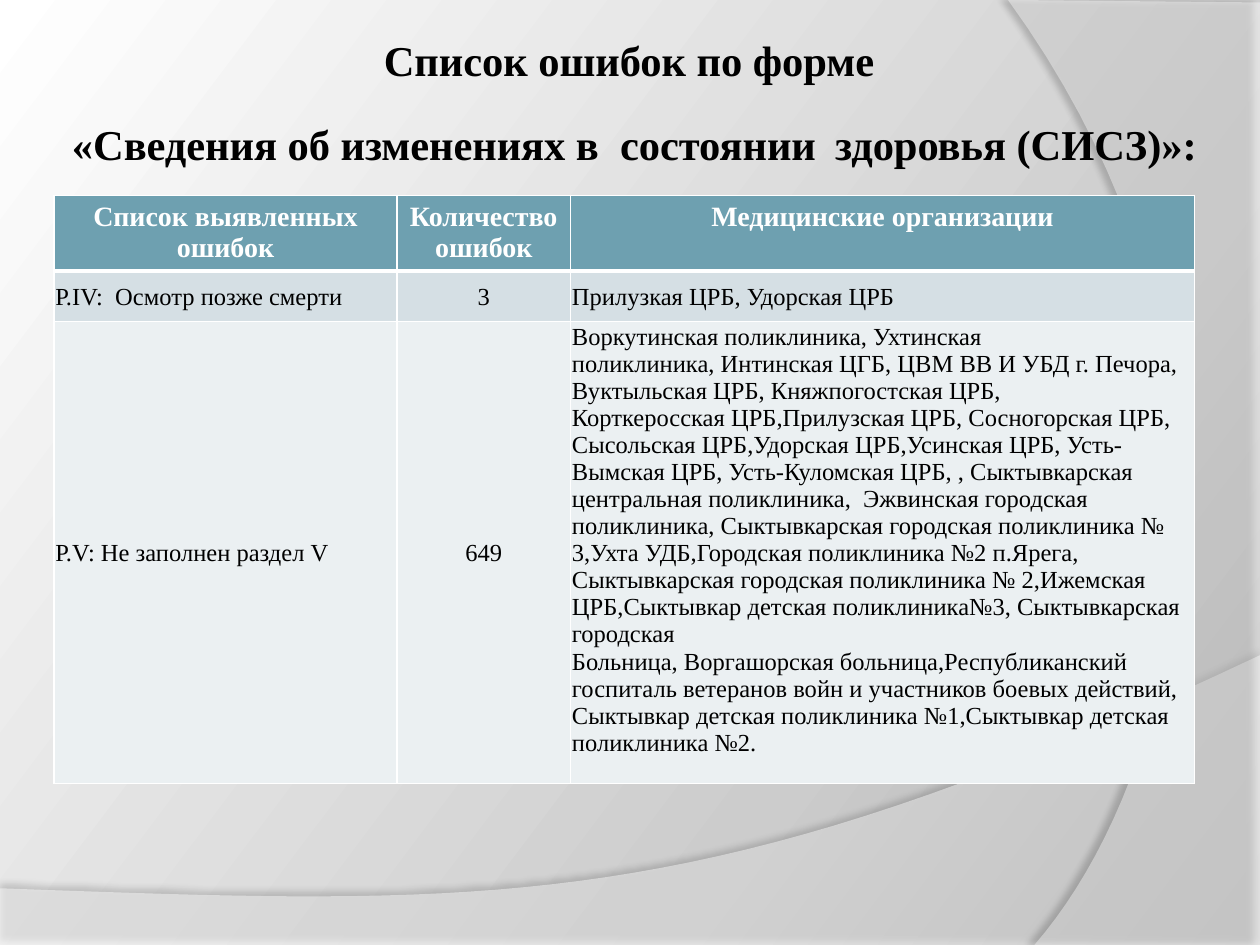
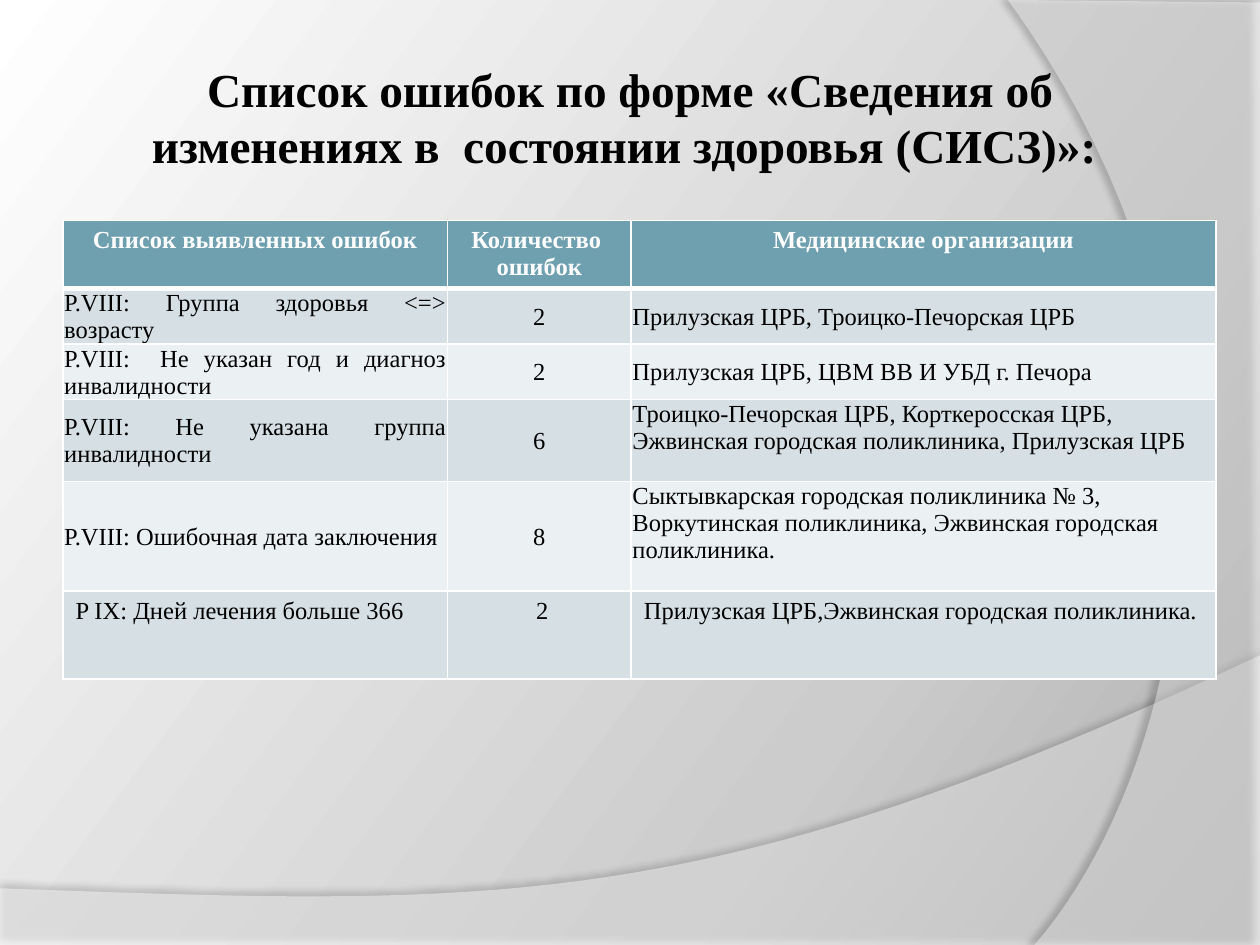
from pptx import Presentation
from pptx.dml.color import RGBColor
from pptx.enum.text import MSO_ANCHOR, MSO_AUTO_SIZE, PP_ALIGN
from pptx.oxml import parse_xml
from pptx.oxml.ns import nsdecls, qn
from pptx.util import Inches, Pt

BLACK = RGBColor(0x00, 0x00, 0x00)
WHITE = RGBColor(0xFF, 0xFF, 0xFF)
HEADER_TEAL = RGBColor(0x6E, 0xA0, 0xB0)
ROW_DARK = RGBColor(0xD5, 0xDF, 0xE4)
ROW_LIGHT = RGBColor(0xEB, 0xF0, 0xF2)
BACKDROP_STOPS = [
    (0, RGBColor(0xAB, 0xAB, 0xAB)),
    (30, RGBColor(0xCC, 0xCC, 0xCC)),
    (100, WHITE),
]

HEADINGS = ["Список выявленных ошибок", "Количество \nошибок", "Медицинские организации"]
COLUMN_ALIGNS = [PP_ALIGN.JUSTIFY, PP_ALIGN.CENTER, PP_ALIGN.LEFT]
BLANK_LINE = 0.21

SECTION_V_CLINICS = "\n".join([
    "Воркутинская поликлиника, Ухтинская",
    "поликлиника, Интинская ЦГБ, ЦВМ ВВ И УБД г. Печора, Вуктыльская ЦРБ, "
    "Княжпогостская ЦРБ,",
    "Корткеросская ЦРБ,Прилузская ЦРБ, Сосногорская ЦРБ, Сысольская ЦРБ,"
    "Удорская ЦРБ,Усинская ЦРБ, Усть-Вымская ЦРБ, Усть-Куломская ЦРБ, , "
    "Сыктывкарская центральная поликлиника,  Эжвинская городская поликлиника, "
    "Сыктывкарская городская поликлиника № 3,Ухта УДБ,Городская поликлиника №2 "
    "п.Ярега, Сыктывкарская городская поликлиника № 2,Ижемская ЦРБ,Сыктывкар "
    "детская поликлиника№3, Сыктывкарская городская",
    "Больница, Воргашорская больница,Республиканский госпиталь ветеранов войн и "
    "участников боевых действий, Сыктывкар детская поликлиника №1,Сыктывкар "
    "детская поликлиника №2.",
])


def curve_points(start, control_1, control_2, end, steps=40):
    """Points along a cubic Bezier curve, both ends included."""
    points = []
    for step in range(steps + 1):
        t = step / steps
        weights = ((1 - t) ** 3, 3 * t * (1 - t) ** 2, 3 * t ** 2 * (1 - t), t ** 3)
        corners = (start, control_1, control_2, end)
        points.append(tuple(sum(w * c[axis] for w, c in zip(weights, corners))
                            for axis in (0, 1)))
    return points


class Deck:
    font = "Times New Roman"

    def __init__(self):
        self.prs = Presentation()
        self.prs.slide_width, self.prs.slide_height = Inches(10), Inches(7.5)
        self.slide = None
        self.paint_backdrop()

    def paint_backdrop(self):
        stops = "".join(f'<a:gs pos="{pos * 1000}"><a:srgbClr val="{color}"/></a:gs>'
                        for pos, color in BACKDROP_STOPS)
        fill = self.prs.slide_master.background.fill
        fill.solid()
        properties = self.prs.slide_master.element.cSld.find(qn("p:bg")).find(qn("p:bgPr"))
        properties.replace(properties[0], parse_xml(
            f'<a:gradFill {nsdecls("a")} rotWithShape="1"><a:gsLst>{stops}</a:gsLst>'
            f'<a:lin ang="{217 * 60000}" scaled="0"/></a:gradFill>'))

    def new_slide(self):
        self.slide = self.prs.slides.add_slide(self.prs.slide_layouts[5])

    def master_band(self, outline, opacity, shadow_opacity, shadow_distance, shadow_angle):
        """Draw a translucent band and move it behind everything, onto the master."""
        start, *others = [(Inches(x), Inches(y)) for x, y in outline]
        builder = self.slide.shapes.build_freeform(*start)
        builder.add_line_segments(others, close=True)
        band = builder.convert_to_shape()
        band.fill.solid()
        band.fill.fore_color.rgb = WHITE
        band.line.fill.background()
        properties = band.element.spPr
        color = properties.find(qn("a:solidFill"))[0]
        color.append(parse_xml(f'<a:alpha {nsdecls("a")} val="{opacity * 1000}"/>'))
        properties.append(parse_xml(
            f'<a:effectLst {nsdecls("a")}><a:outerShdw blurRad="{Pt(4)}" '
            f'dist="{Pt(shadow_distance)}" dir="{shadow_angle * 60000}" algn="ctr" '
            f'rotWithShape="0"><a:srgbClr val="{BLACK}">'
            f'<a:alpha val="{shadow_opacity * 1000}"/></a:srgbClr></a:outerShdw>'
            '</a:effectLst>'))
        placeholder = self.prs.slide_master.placeholders[0]
        placeholder.element.addprevious(band.element)

    def add_run(self, paragraph, text, size, color, bold):
        run = paragraph.add_run()
        run.text = text
        run.font.name, run.font.size, run.font.bold = self.font, Pt(size), bold
        run.font.color.rgb = color

    def title(self, box, lines):
        """Each line is a list of (text, size) runs."""
        title = self.slide.shapes.title
        title.left, title.top, title.width, title.height = map(Inches, box)
        frame = title.text_frame
        frame.word_wrap, frame.auto_size = True, MSO_AUTO_SIZE.NONE
        frame.vertical_anchor = MSO_ANCHOR.MIDDLE
        frame.margin_left = frame.margin_right = Inches(0.05)
        frame.margin_top = frame.margin_bottom = Inches(0.05)
        paragraph = frame.paragraphs[0]
        paragraph.alignment = PP_ALIGN.CENTER
        for number, line in enumerate(lines):
            if number:
                paragraph.add_line_break()
            for text, size in line:
                self.add_run(paragraph, text, size, BLACK, True)

    def fill_cell(self, cell, text, size, align, color, bold, fill, top=1, bottom=1):
        for side, width in (("L", 1), ("R", 1), ("T", top), ("B", bottom)):
            cell._tc.get_or_add_tcPr().append(parse_xml(
                f'<a:ln{side} {nsdecls("a")} w="{Pt(width)}"><a:solidFill>'
                f'<a:srgbClr val="{WHITE}"/></a:solidFill></a:ln{side}>'))
        cell.fill.solid()
        cell.fill.fore_color.rgb = fill
        for number, line in enumerate(text.split("\n")):
            frame = cell.text_frame
            paragraph = frame.add_paragraph() if number else frame.paragraphs[0]
            paragraph.alignment = align
            self.add_run(paragraph, line, size, color, bold)

    def tighten(self, cell, bottom=0.0):
        cell.vertical_anchor = MSO_ANCHOR.MIDDLE
        cell.margin_left = cell.margin_right = cell.margin_top = Inches(0.01)
        cell.margin_bottom = Inches(bottom)

    def error_table(self, left, top, widths, heights, errors, heading_size,
                    spaced_rows=(), roomy_rows=()):
        """Spaced rows leave a line free under the clinics; roomy rows keep full margins."""
        table = self.slide.shapes.add_table(
            len(heights), len(widths), Inches(left), Inches(top),
            Inches(sum(widths)), Inches(sum(heights))).table
        for column, width in zip(table.columns, widths):
            column.width = Inches(width)
        for row, height in zip(table.rows, heights):
            row.height = Inches(height)
        for col, heading in enumerate(HEADINGS):
            self.fill_cell(table.cell(0, col), heading, heading_size, PP_ALIGN.CENTER,
                           WHITE, True, HEADER_TEAL, bottom=3)
        for row, error in enumerate(errors, start=1):
            for col, text in enumerate(error):
                cell = table.cell(row, col)
                align = COLUMN_ALIGNS[col]
                if row in roomy_rows and col == 0:
                    align = PP_ALIGN.LEFT
                self.fill_cell(cell, text, 14, align, BLACK, False,
                               ROW_DARK if row % 2 else ROW_LIGHT, top=3 if row == 1 else 1)
                if row not in roomy_rows:
                    self.tighten(cell, BLANK_LINE if row in spaced_rows and col == 2 else 0)


def main():
    deck = Deck()

    deck.new_slide()
    lower_curve = curve_points((10, 5.2), (5.59, 7.29), (3.91, 7.19), (0, 7.05))
    right_curve = curve_points((8.21, 7.5), (9.35, 6.19), (10.18, 3), (8, 0))
    deck.master_band([(0, 7.51), (10, 7.51)] + lower_curve, 45, 35, 3.5, 270)
    deck.master_band([(10, 0.02), (10, 7.5)] + right_curve, 40, 45, 4, 180)
    deck.title((0.5, 0.36, 9.07, 0.94), [
        [("Список ошибок по форме ", 24.3)],
        [("«Сведения об изменениях в  состоянии", 24.3), (" ", 43.2),
         ("здоровья (СИСЗ)»: ", 24.3)],
    ])
    deck.error_table(0.43, 1.55, [2.72, 1.38, 4.95], [0.6, 0.4, 3.67], [
        ("Р.IV:  Осмотр позже смерти", "3", "Прилузкая ЦРБ, Удорская ЦРБ"),
        ("Р.V: Не заполнен раздел V", "649", SECTION_V_CLINICS),
    ], heading_size=16, spaced_rows=(2,))

    deck.new_slide()
    deck.title((0.75, 0.3, 8.5, 1.25), [
        [("Список ошибок по форме «Сведения об изменениях в  состоянии "
          "здоровья (СИСЗ)»: ", 27)],
    ])
    deck.error_table(0.5, 1.75, [3.05, 1.46, 4.64], [0.54, 0.43, 0.44, 0.65, 0.87, 0.7], [
        ("Р.VIII: Группа здоровья <=> возрасту", "2",
         "Прилузская ЦРБ, Троицко-Печорская ЦРБ"),
        ("Р.VIII:  Не указан год и диагноз инвалидности", "2",
         "Прилузская ЦРБ, ЦВМ ВВ И УБД г. Печора"),
        ("Р.VIII: Не указана группа инвалидности", "6",
         "Троицко-Печорская ЦРБ, Корткеросская ЦРБ, Эжвинская городская поликлиника, "
         "Прилузская ЦРБ"),
        ("Р.VIII: Ошибочная дата заключения", "8",
         "Сыктывкарская городская поликлиника № 3, Воркутинская поликлиника, "
         "Эжвинская городская поликлиника."),
        ("P IX: Дней лечения больше 366", " 2",
         "Прилузская ЦРБ,Эжвинская городская поликлиника."),
    ], heading_size=14, spaced_rows=(3, 4), roomy_rows=(5,))

    deck.prs.save("out.pptx")


if __name__ == "__main__":
    main()
